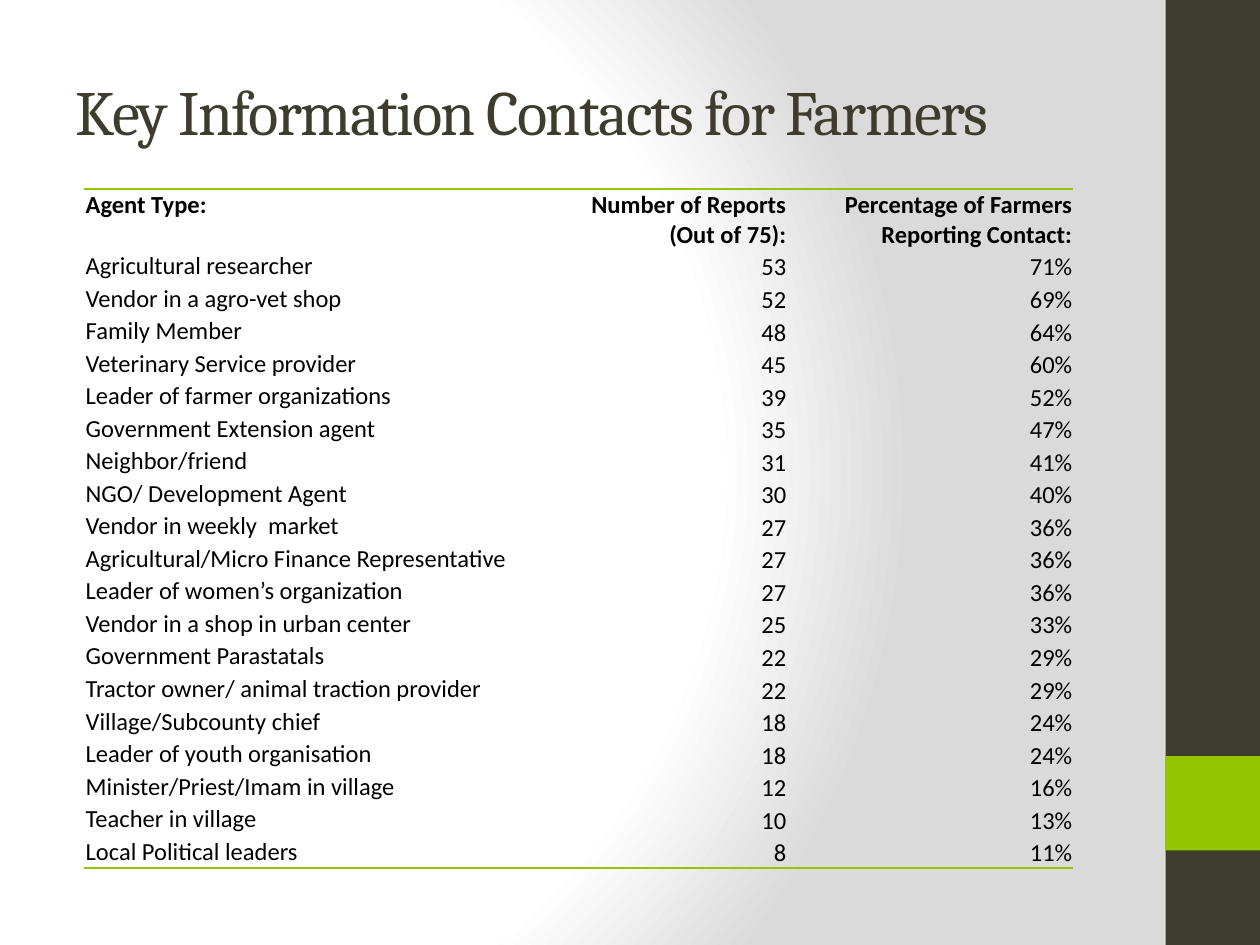
from pptx import Presentation
from pptx.dml.color import RGBColor
from pptx.enum.shapes import MSO_SHAPE
from pptx.enum.text import MSO_ANCHOR, PP_ALIGN
from pptx.oxml import parse_xml
from pptx.oxml.ns import nsdecls, qn
from pptx.util import Inches, Pt

DARK, GREEN, BLACK = "3E3D2D", "94C600", "000000"
NO_STYLE = "{2D5ABB26-0587-4C30-8999-92F81FD0307C}"
FARMERS = 75
HEADER = ("Agent Type:", "Number of Reports (Out of 75):",
          "Percentage of Farmers Reporting Contact:")
REPORTS = [
    ("Agricultural researcher", 53),
    ("Vendor in a agro-vet shop", 52),
    ("Family Member", 48),
    ("Veterinary Service provider", 45),
    ("Leader of farmer organizations", 39),
    ("Government Extension agent", 35),
    ("Neighbor/friend", 31),
    ("NGO/ Development Agent", 30),
    ("Vendor in weekly  market", 27),
    ("Agricultural/Micro Finance Representative", 27),
    ("Leader of women’s organization", 27),
    ("Vendor in a shop in urban center", 25),
    ("Government Parastatals", 22),
    ("Tractor owner/ animal traction provider", 22),
    ("Village/Subcounty chief", 18),
    ("Leader of youth organisation", 18),
    ("Minister/Priest/Imam in village", 12),
    ("Teacher in village", 10),
    ("Local Political leaders", 8),
]


def color(value):
    return RGBColor.from_string(value)


def set_font(font, name, size, value, bold=False):
    font.name, font.size, font.bold = name, Pt(size), bold
    font.color.rgb = color(value)


def set_background(s):
    stops = "".join(
        f'<a:gs pos="{pos * 1000}"><a:srgbClr val="{value}"/></a:gs>'
        for pos, value in ((0, "FFFFFF"), (75, "FFFFFF"), (100, "DADADA")))
    bg = parse_xml(
        f'<p:bg {nsdecls("p", "a")}><p:bgPr><a:gradFill rotWithShape="1">'
        f'<a:gsLst>{stops}</a:gsLst><a:path path="circle">'
        '<a:fillToRect l="20000" t="50000" r="100000" b="50000"/></a:path>'
        '</a:gradFill><a:effectLst/></p:bgPr></p:bg>')
    s.element.cSld.insert(0, bg)


def add_block(s, left, top, width, height, value):
    sp = s.shapes.add_shape(MSO_SHAPE.RECTANGLE, Inches(left), Inches(top),
                            Inches(width), Inches(height))
    sp.shadow.inherit = False
    sp.fill.solid()
    sp.fill.fore_color.rgb = color(value)
    sp.line.fill.background()


def set_title(s, text):
    sp = s.shapes.title
    sp.left, sp.top = Inches(0.5), Inches(0.25)
    sp.width, sp.height = Inches(8.33), Inches(1.25)
    tf = sp.text_frame
    tf.text = text
    tf.vertical_anchor = MSO_ANCHOR.MIDDLE
    p = tf.paragraphs[0]
    p.alignment = PP_ALIGN.LEFT
    set_font(p.font, "Cambria", 36, DARK)
    p.runs[0]._r.get_or_add_rPr().set("spc", "-100")


def set_border(cell, side):
    cell._tc.get_or_add_tcPr().insert(0, parse_xml(
        f'<a:{side} {nsdecls("a")} w="12700"><a:solidFill>'
        f'<a:srgbClr val="{GREEN}"/></a:solidFill></a:{side}>'))


def fill_cell(cell, text, bold, numeric):
    cell.margin_left = cell.margin_right = cell.margin_top = Inches(0.01)
    cell.margin_bottom = 0
    cell.fill.background()
    cell.vertical_anchor = MSO_ANCHOR.BOTTOM if numeric else MSO_ANCHOR.TOP
    cell.text = text
    p = cell.text_frame.paragraphs[0]
    p.alignment = PP_ALIGN.RIGHT if numeric else PP_ALIGN.LEFT
    set_font(p.font, "Calibri", 14, BLACK, bold)


def add_contact_table(s):
    rows = [HEADER] + [(agent, str(n), f"{n / FARMERS:.0%}")
                       for agent, n in REPORTS]
    widths = (3.75, 1.83, 2.27)
    height, header_height = 5.39, 0.48
    table = s.shapes.add_table(len(rows), len(widths), Inches(0.67), Inches(1.5),
                               Inches(sum(widths)), Inches(height)).table
    table.first_row = table.horz_banding = False
    table._tbl.tblPr.find(qn("a:tableStyleId")).text = NO_STYLE
    for column, width in zip(table.columns, widths):
        column.width = Inches(width)
    for i, values in enumerate(rows):
        table.rows[i].height = Inches(
            (height - header_height) / len(REPORTS) if i else header_height)
        for j, text in enumerate(values):
            fill_cell(table.cell(i, j), text, bold=i == 0, numeric=j > 0)
    for j in range(len(widths)):
        set_border(table.cell(0, j), "lnT")
        set_border(table.cell(len(rows) - 1, j), "lnB")


def main():
    prs = Presentation()
    prs.slide_width, prs.slide_height = Inches(10), Inches(7.5)
    s = prs.slides.add_slide(prs.slide_layouts.get_by_name("Title Only"))
    set_background(s)
    add_block(s, 9.25, 0, 0.75, 7.5, DARK)
    add_block(s, 9.25, 6, 0.75, 0.75, GREEN)
    set_title(s, "Key Information Contacts for Farmers")
    add_contact_table(s)
    prs.save("out.pptx")


if __name__ == "__main__":
    main()
